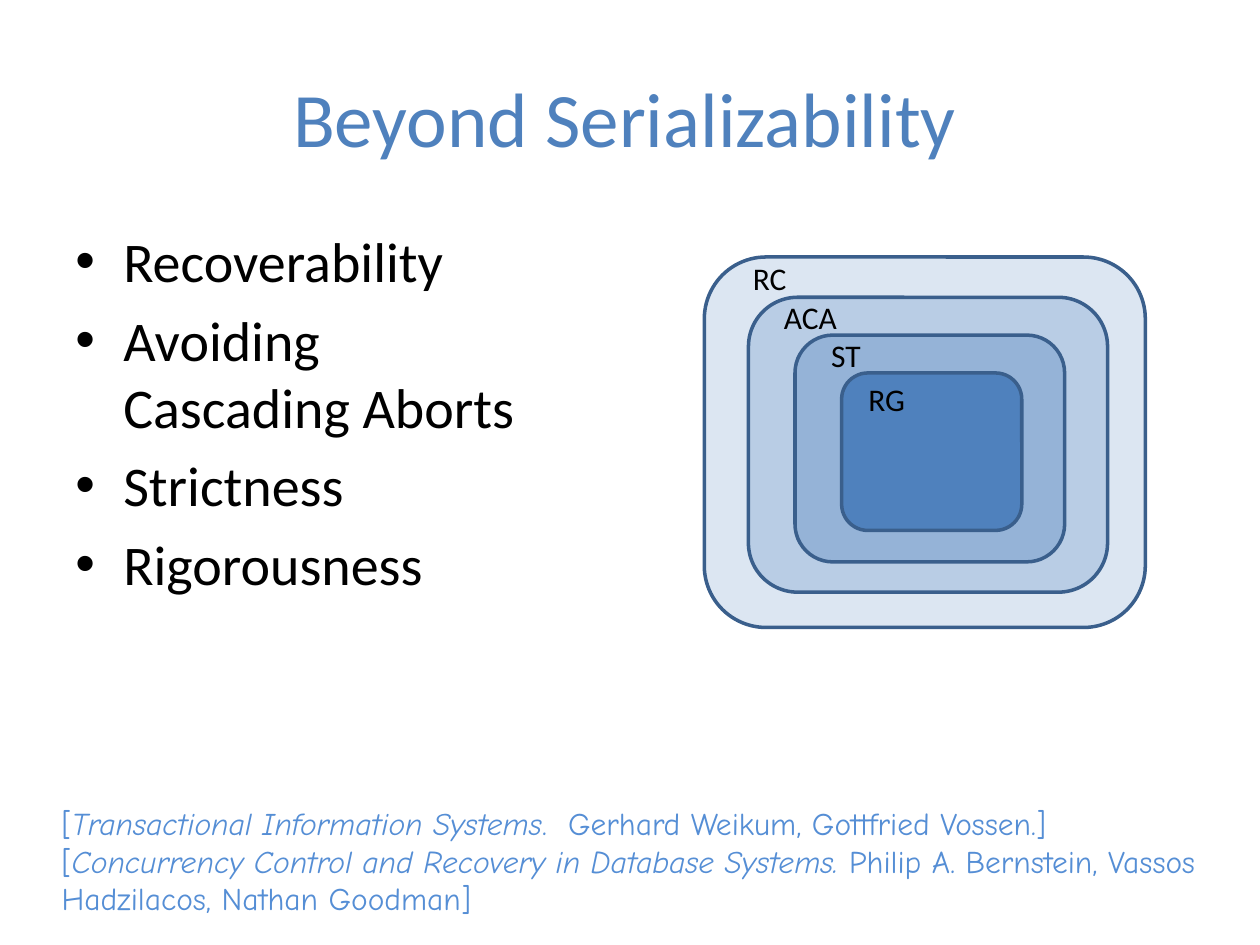
from pptx import Presentation
from pptx.dml.color import RGBColor
from pptx.enum.shapes import MSO_SHAPE as SHAPE
from pptx.enum.text import MSO_ANCHOR as ANCHOR, PP_ALIGN as ALIGN
from pptx.oxml.ns import qn
from pptx.util import Inches, Pt
from lxml import etree


def rgb(value):
    return RGBColor.from_string(value)


def add_text(s, box, paragraphs, size=18, font="Calibri", color="000000",
             align=ALIGN.LEFT, anchor=ANCHOR.TOP, before=0, bullet=None):
    tf = s.shapes.add_textbox(*map(Inches, box)).text_frame
    tf.word_wrap = True
    tf.vertical_anchor = anchor
    for i, runs in enumerate(paragraphs):
        p = tf.paragraphs[0] if i == 0 else tf.add_paragraph()
        p.alignment = align
        p.space_before = Pt(before)
        if bullet:
            pPr = p._p.get_or_add_pPr()
            pPr.set("marL", str(Inches(0.38)))
            pPr.set("indent", str(Inches(-0.38)))
            etree.SubElement(pPr, qn("a:buFont")).set("typeface", "Arial")
            etree.SubElement(pPr, qn("a:buChar")).set("char", bullet)
        for text, italic in runs:
            r = p.add_run()
            r.text = text
            r.font.size = Pt(size)
            r.font.name = font
            r.font.italic = italic
            r.font.color.rgb = rgb(color)


prs = Presentation()
prs.slide_width, prs.slide_height = Inches(10), Inches(7.5)
s = prs.slides.add_slide(prs.slide_layouts[6])

add_text(s, (0.5, 0.3, 8.92, 1.25), [[("Beyond Serializability", False)]],
         size=44, color="4F81BD", align=ALIGN.CENTER, anchor=ANCHOR.MIDDLE)

topics = ["Recoverability", "Avoiding Cascading Aborts", "Strictness", "Rigorousness"]
add_text(s, (0.5, 1.75, 3.92, 5.25), [[(topic, False)] for topic in topics],
         size=32, before=6.4, bullet="•")

references = [
    [("[", False), ("Transactional Information Systems", True),
     (".  Gerhard Weikum, Gottfried Vossen.]", False)],
    [("[", False), ("Concurrency Control and Recovery in Database Systems. ", True),
     ("Philip A. Bernstein, Vassos Hadzilacos, Nathan Goodman]", False)],
]
add_text(s, (0.39, 6.33, 9.23, 1.33), references, font="Comic Neue", color="558ED5")

classes = [
    ("RC", (5.59, 2.04, 3.5, 2.94), "DCE6F2", (5.66, 2.01, 0.68, 0.4)),
    ("ACA", (5.94, 2.36, 2.85, 2.34), "B9CDE5", (6.03, 2.32, 0.71, 0.4)),
    ("ST", (6.31, 2.66, 2.14, 1.8), "95B3D7", (6.28, 2.62, 0.65, 0.4)),
    ("RG", (6.68, 2.96, 1.43, 1.25), "4F81BD", (6.66, 2.97, 0.62, 0.4)),
]
for name, box, fill, label_box in classes:
    sp = s.shapes.add_shape(SHAPE.ROUNDED_RECTANGLE, *map(Inches, box))
    sp.shadow.inherit = False
    sp.fill.solid()
    sp.fill.fore_color.rgb = rgb(fill)
    sp.line.color.rgb = rgb("3A5F8C")
    sp.line.width = Pt(2)
for name, box, fill, label_box in classes:
    add_text(s, label_box, [[(name, False)]], align=ALIGN.RIGHT)

prs.save("out.pptx")
